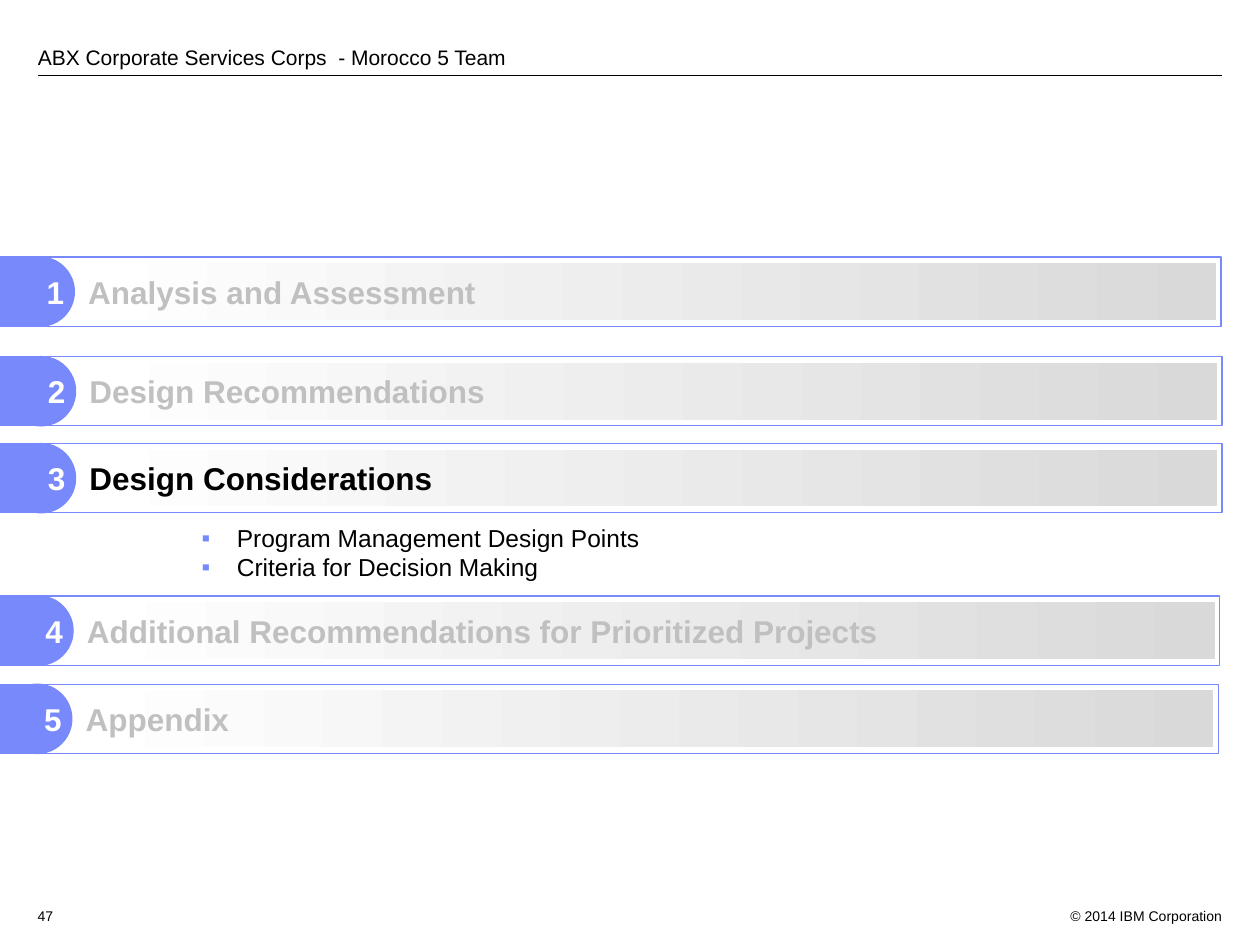
from dataclasses import dataclass

import lxml.etree
import pptx
import pptx.dml.color
import pptx.enum.shapes
import pptx.enum.text
import pptx.oxml.ns
import pptx.util

Inches = pptx.util.Inches
Pt = pptx.util.Pt
ALIGN = pptx.enum.text.PP_ALIGN
ANCHOR = pptx.enum.text.MSO_ANCHOR
SHAPE = pptx.enum.shapes.MSO_SHAPE
qn = pptx.oxml.ns.qn

BLUE, BLACK, WHITE = "7889FB", "000000", "FFFFFF"
MUTED, BAR_END = "C0C0C0", "D9D9D9"
BAND_HEIGHT = 0.55


@dataclass
class Section:
    title: str
    left: float
    top: float
    color: str = MUTED


SECTIONS = [
    Section("Analysis and Assessment", -0.01, 2.04),
    Section("Design Recommendations", 0, 2.83),
    Section("Design Considerations", 0, 3.52, BLACK),
    Section("Additional Recommendations for Prioritized Projects", -0.02, 4.73),
    Section("Appendix", -0.03, 5.43),
]
DESIGN_POINTS = ["Program Management Design Points", "Criteria for Decision Making"]


def rgb(color: str) -> pptx.dml.color.RGBColor:
    return pptx.dml.color.RGBColor.from_string(color)


def box(*lengths: float) -> list:
    return [Inches(length) for length in lengths]


def place(shape, left: float, top: float, width: float, height: float) -> None:
    shape.left, shape.top, shape.width, shape.height = box(left, top, width, height)


def set_text(shape, lines: list[str], size: float, color: str, bold: bool = False,
             align=ALIGN.LEFT, anchor=ANCHOR.TOP, wrap: bool = True,
             insets: tuple = (0.1, 0.05, 0.1, 0.05), bullet: str = "") -> None:
    frame = shape.text_frame
    left, top, right, bottom = box(*insets)
    frame_format = {
        "auto_size": pptx.enum.text.MSO_AUTO_SIZE.NONE, "word_wrap": wrap,
        "vertical_anchor": anchor, "margin_left": left, "margin_top": top,
        "margin_right": right, "margin_bottom": bottom,
    }
    for name, value in frame_format.items():
        setattr(frame, name, value)
    frame.text = "\n".join(lines)
    font_format = {"name": "Arial", "size": Pt(size), "bold": bold}
    for paragraph in frame.paragraphs:
        paragraph.alignment = align
        paragraph.space_before = Pt(0)
        if bullet:
            add_bullet(paragraph, bullet)
        for run in paragraph.runs:
            for name, value in font_format.items():
                setattr(run.font, name, value)
            run.font.color.rgb = rgb(color)


def add_bullet(paragraph, character: str, indent: float = 0.28) -> None:
    properties = paragraph._p.get_or_add_pPr()
    properties.set("marL", str(Inches(indent)))
    properties.set("indent", str(-Inches(indent)))
    bullet_color = lxml.etree.SubElement(properties, qn("a:buClr"))
    lxml.etree.SubElement(bullet_color, qn("a:srgbClr"), val=BLUE)
    lxml.etree.SubElement(properties, qn("a:buFont"), typeface="Arial")
    lxml.etree.SubElement(properties, qn("a:buChar"), char=character)


def add_part(group, kind, left: float, top: float, width: float, height: float,
             fill: str = "", line: str = ""):
    part = group.shapes.add_shape(kind, *box(left, top, width, height))
    part.shadow.inherit = False
    if fill:
        part.fill.solid()
        part.fill.fore_color.rgb = rgb(fill)
    else:
        part.fill.background()
    if line:
        part.line.color.rgb = rgb(line)
        part.line.width = Pt(0.75)
    else:
        part.line.fill.background()
    return part


def add_section(slide, number: int, section: Section) -> None:
    group = slide.shapes.add_group_shape()
    left, top = section.left, section.top
    badge = add_part(group, SHAPE.OVAL, left + 0.05, top, BAND_HEIGHT, BAND_HEIGHT,
                     fill=BLUE, line=BLUE)
    set_text(badge, [str(number)], 18, WHITE, bold=True, align=ALIGN.RIGHT,
             anchor=ANCHOR.MIDDLE, wrap=False, insets=(0, 0, 0, 0))
    add_part(group, SHAPE.RECTANGLE, left, top, 9.7, BAND_HEIGHT, line=BLUE)
    add_part(group, SHAPE.RECTANGLE, left, top, 0.3, BAND_HEIGHT, fill=BLUE)
    bar = add_part(group, SHAPE.RECTANGLE, left + 0.71, top + 0.05, 8.95, 0.45)
    bar.fill.gradient()
    bar.fill.gradient_angle = 0
    for position, (stop, color) in enumerate(zip(bar.fill.gradient_stops, (WHITE, BAR_END))):
        stop.position = position
        stop.color.rgb = rgb(color)
    set_text(bar, [section.title], 18, section.color, bold=True, anchor=ANCHOR.MIDDLE,
             wrap=False, insets=(0, 0.05, 0.1, 0.05))


def add_header(slide) -> None:
    header = slide.shapes.title
    place(header, 0.2, 0.15, 8.63, 0.4)
    set_text(header, ["ABX Corporate Services Corps  - Morocco 5 Team"], 12, BLACK,
             anchor=ANCHOR.BOTTOM, insets=(0.1, 0, 0.1, 0))
    rule = slide.shapes.add_connector(pptx.enum.shapes.MSO_CONNECTOR.STRAIGHT,
                                      *box(0.3, 0.6, 9.7, 0.6))
    rule.line.color.rgb = rgb(BLACK)
    rule.line.width = Pt(0.75)
    lxml.etree.SubElement(rule._element.spPr, qn("a:effectLst"))


def add_footer(slide) -> None:
    page_number = slide.shapes.add_textbox(*box(0.2, 7.15, 0.4, 0.2))
    set_text(page_number, ["47"], 8, BLACK)
    copyright_line = slide.shapes.add_textbox(*box(8.3, 7.15, 1.5, 0.2))
    set_text(copyright_line, ["© 2014 IBM Corporation"], 8, BLACK, align=ALIGN.RIGHT)


def main() -> None:
    deck = pptx.Presentation()
    deck.slide_width, deck.slide_height = box(10, 7.5)
    slide = deck.slides.add_slide(deck.slide_layouts[1])
    add_header(slide)
    for number, section in enumerate(SECTIONS, start=1):
        add_section(slide, number, section)
    design_points = slide.placeholders[1]
    place(design_points, 1.5, 4.1, 5, 0.57)
    set_text(design_points, DESIGN_POINTS, 14, BLACK, bullet="▪")
    add_footer(slide)
    deck.save("out.pptx")


if __name__ == "__main__":
    main()
